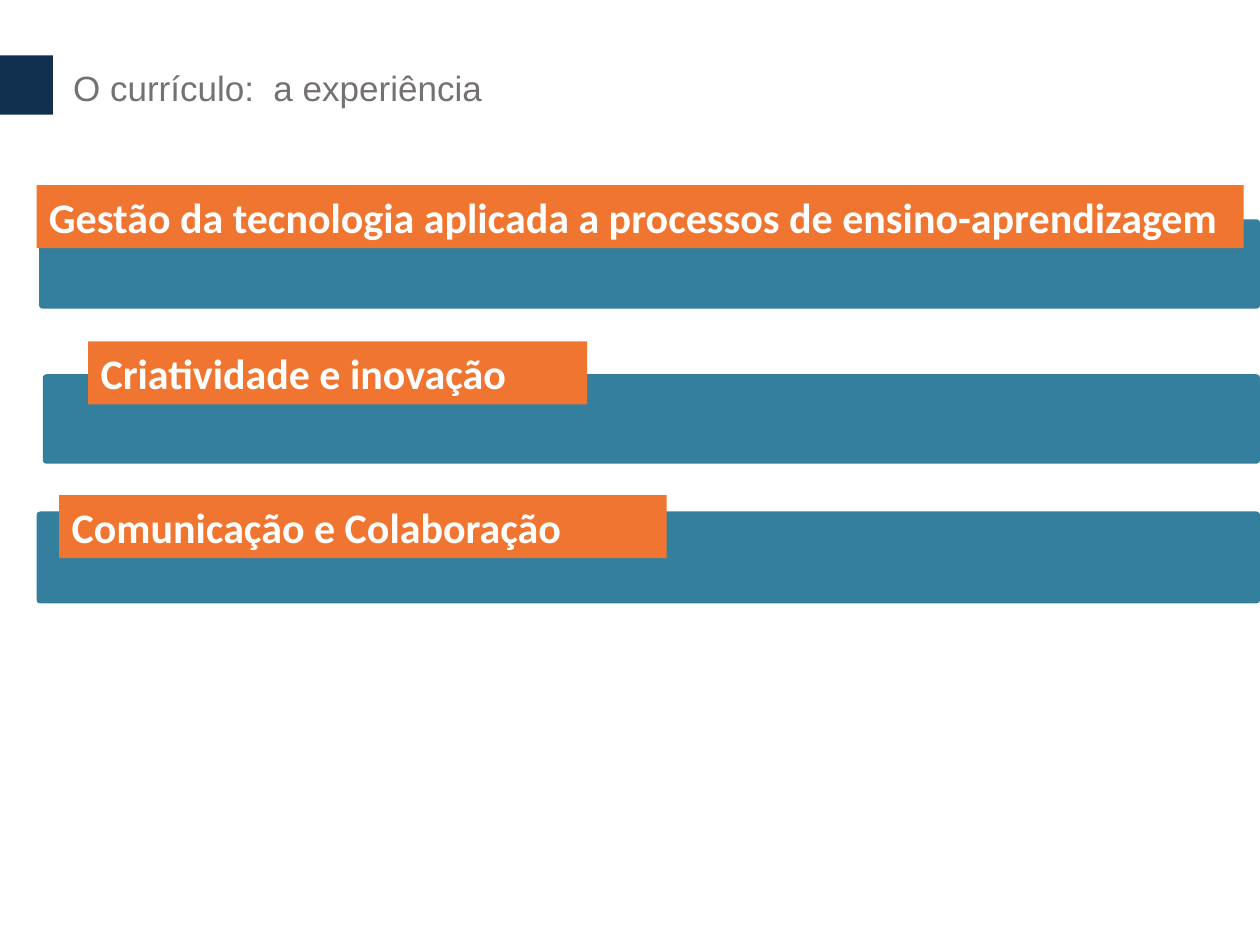
from pptx import Presentation
from pptx.dml.color import RGBColor
from pptx.enum.shapes import MSO_SHAPE as SHAPE
from pptx.enum.text import MSO_ANCHOR as ANCHOR, PP_ALIGN as ALIGN
from pptx.util import Inches, Pt

WIDTH, HEIGHT = Inches(10), Inches(7.5)
COLS, ROWS = 100, 75
NAVY, BLUE, ORANGE, GRAY, WHITE = "11304F", "347F9E", "F07530", "767171", "FFFFFF"
TITLE_FONT = {"name": "Arial", "size": Pt(20), "bold": False}
LABEL_FONT = {"name": "Calibri", "size": Pt(24), "bold": True}
LABEL_ROWS = 5
BANDS = [
    ((3.1, 17.4, 96.9, 7.1), (-0.2, -2.7, 95.8),
     "Gestão da tecnologia aplicada a processos de ensino-aprendizagem"),
    ((3.4, 29.7, 96.6, 7.1), (3.6, -2.6, 39.6), "Criatividade e inovação"),
    ((2.9, 40.6, 97.1, 7.3), (1.8, -1.3, 48.2), "Comunicação e Colaboração"),
]


def color(hex_value):
    """Turn a hex string into a colour."""
    return RGBColor.from_string(hex_value)


def grid(box):
    """Turn columns and rows into slide lengths."""
    x, y, w, h = box
    return (round(WIDTH * x / COLS), round(HEIGHT * y / ROWS),
            round(WIDTH * w / COLS), round(HEIGHT * h / ROWS))


def write(sp, text, font, hex_value, anchor):
    """Write one left-aligned line of formatted text."""
    tf = sp.text_frame
    tf.word_wrap, tf.vertical_anchor = True, anchor
    p = tf.paragraphs[0]
    p.alignment = ALIGN.LEFT
    r = p.add_run()
    r.text = text
    for name, value in font.items():
        setattr(r.font, name, value)
    r.font.color.rgb = color(hex_value)


def add_block(s, kind, box, hex_value):
    """Add a plain filled shape."""
    sp = s.shapes.add_shape(kind, *grid(box))
    sp.shadow.inherit = False
    sp.fill.solid()
    sp.fill.fore_color.rgb = color(hex_value)
    sp.line.fill.background()
    return sp


def add_header(s, box):
    """Add the navy tab and the title to its right."""
    x, y, w, h = box
    tab = 4.2
    add_block(s, SHAPE.RECTANGLE, (x, y, tab, h), NAVY)
    title = s.shapes.title
    title.left, title.top, title.width, title.height = grid(
        (x + tab + 0.6, y + 0.4, w - tab - 0.6, h - 0.3))
    write(title, "O currículo:  a experiência", TITLE_FONT, GRAY, ANCHOR.TOP)


def add_band(s, box, label, text):
    """Add a blue band with its orange label on the upper edge."""
    x, y, _, _ = box
    dx, dy, w = label
    band = add_block(s, SHAPE.ROUNDED_RECTANGLE, box, BLUE)
    band.adjustments[0] = 0.04
    sp = add_block(s, SHAPE.RECTANGLE, (x + dx, y + dy, w, LABEL_ROWS), ORANGE)
    write(sp, text, LABEL_FONT, WHITE, ANCHOR.TOP)


def main():
    """Build and save the slide."""
    prs = Presentation()
    prs.slide_width, prs.slide_height = WIDTH, HEIGHT
    s = prs.slides.add_slide(prs.slide_layouts[5])
    add_header(s, (0, 4.4, 95.4, 4.7))
    for box, label, text in BANDS:
        add_band(s, box, label, text)
    prs.save("out.pptx")


if __name__ == "__main__":
    main()
